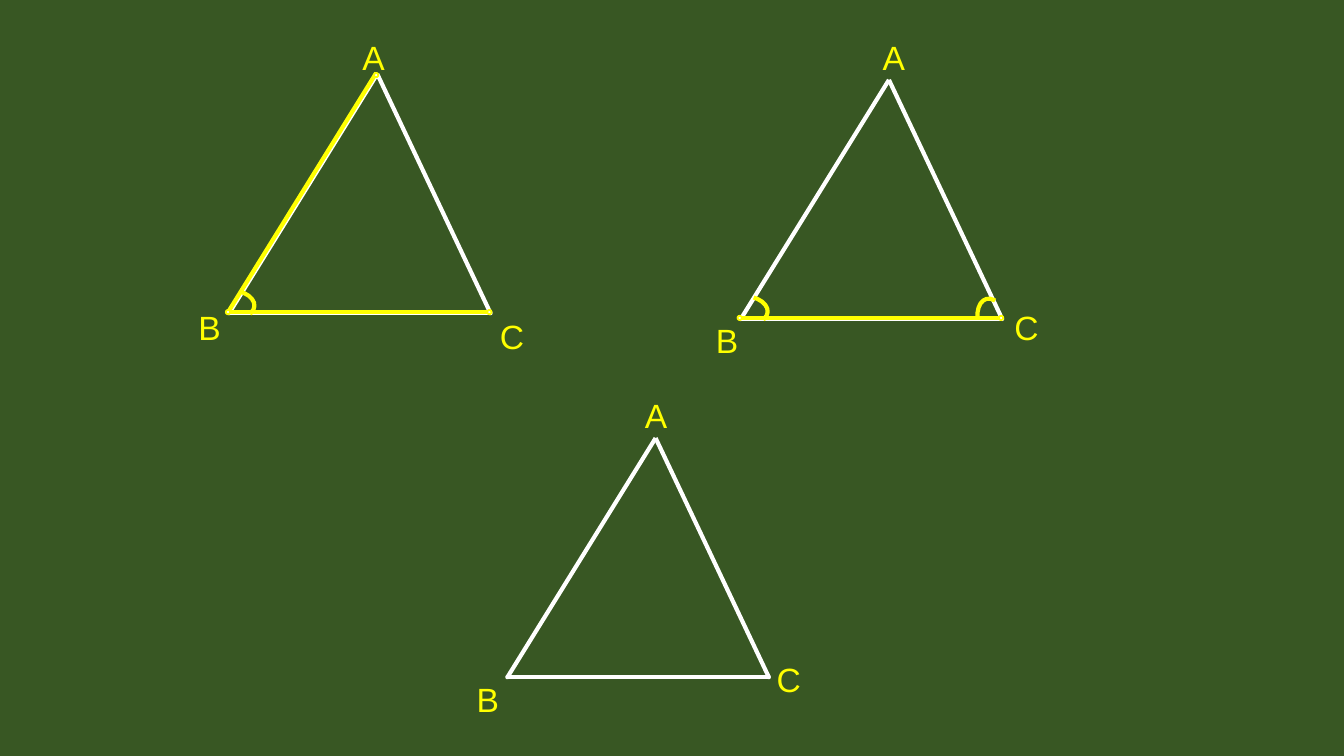
from lxml import etree
from pptx import Presentation
from pptx import util as u
from pptx.dml.color import RGBColor
from pptx.enum import shapes, text
from pptx.oxml.ns import qn

WHITE, YELLOW, GREEN = "FFFFFF", "FFFF00", "385723"
# Corners relative to the apex, in cm
CORNERS = {"A": (0, 0), "B": (-2.8, 4.52), "C": (2.14, 4.52)}
DOT = 0.08
# Highlights sit slightly up and left, so the white edge stays visible
SHIFT = 0.02


def color(hex_code):
    return RGBColor.from_string(hex_code)


def corner(apex, name):
    return apex[0] + CORNERS[name][0], apex[1] + CORNERS[name][1]


def add_side(page, apex, side, hex_code):
    start, end = (corner(apex, name) for name in side)
    line = page.shapes.add_connector(
        shapes.MSO_CONNECTOR.STRAIGHT, *map(u.Cm, start + end))
    line.line.color.rgb = color(hex_code)
    line.line.width = u.Pt(2.25)
    etree.SubElement(line._element.spPr, qn("a:effectLst"))


def add_dot(page, apex, name, outline=None):
    x, y = corner(apex, name)
    # The apex dot hangs below its corner
    top = y if name == "A" else y - DOT / 2
    dot = page.shapes.add_shape(
        shapes.MSO_SHAPE.OVAL, u.Cm(x - DOT / 2), u.Cm(top),
        u.Cm(DOT), u.Cm(DOT))
    dot.shadow.inherit = False
    dot.fill.solid()
    dot.fill.fore_color.rgb = color(WHITE)
    if outline:
        dot.line.color.rgb = color(outline)
        dot.line.width = u.Pt(1)
    else:
        dot.line.fill.background()


def add_triangle(page, apex, dots="ABC"):
    for side in ("AC", "AB", "BC"):
        add_side(page, apex, side, WHITE)
    for name in dots:
        add_dot(page, apex, name)


def add_highlight(page, apex, sides, dots):
    shifted = (apex[0] - SHIFT, apex[1] - SHIFT)
    for side in sides:
        add_side(page, shifted, side, YELLOW)
    for name in dots:
        add_dot(page, shifted, name, YELLOW)


def add_angle(page, left, top, rotation):
    arc = page.shapes.add_shape(
        shapes.MSO_SHAPE.ARC, u.Cm(left), u.Cm(top), u.Cm(0.84), u.Cm(0.53))
    arc.shadow.inherit = False
    arc.rotation = rotation
    arc.adjustments[0], arc.adjustments[1] = 178.8, 13.91
    arc.fill.background()
    arc.line.color.rgb = color(YELLOW)
    arc.line.width = u.Pt(2.25)


def add_label(page, name, left, top):
    box = page.shapes.add_textbox(
        u.Cm(left), u.Cm(top), u.Cm(1.63), u.Cm(0.97))
    frame = box.text_frame
    frame.word_wrap = True
    frame.auto_size = text.MSO_AUTO_SIZE.SHAPE_TO_FIT_TEXT
    frame.margin_left = frame.margin_right = u.Cm(0.19)
    frame.margin_top = frame.margin_bottom = u.Cm(0.1)
    para = frame.paragraphs[0]
    para.text = name
    para.font.name = "Arial"
    para.font.size = u.Pt(18)
    para.font.color.rgb = color(YELLOW)


def add_labels(page, places):
    for name, (left, top) in zip("ABC", places):
        add_label(page, name, left, top)


def main():
    deck = Presentation()
    deck.slide_width, deck.slide_height = u.Cm(25.4), u.Cm(14.29)
    page = deck.slides.add_slide(deck.slide_layouts[6])
    page.background.fill.solid()
    page.background.fill.fore_color.rgb = color(GREEN)

    # Two sides and the angle between them
    apex = (7.13, 1.4)
    add_triangle(page, apex, dots="BC")
    add_labels(page, [(6.66, 0.6), (3.56, 5.71), (9.26, 5.88)])
    add_highlight(page, apex, ["AB", "BC"], "ABC")
    add_angle(page, 3.97, 5.49, 4.8)

    # One side and the two angles on it
    apex = (16.8, 1.51)
    add_triangle(page, apex)
    add_labels(page, [(16.49, 0.6), (13.34, 5.94), (18.98, 5.71)])
    add_highlight(page, apex, ["BC"], "BC")
    add_angle(page, 13.67, 5.6, 4.8)
    add_angle(page, 18.33, 5.79, 255.6)

    # Plain triangle
    add_triangle(page, (12.39, 8.28))
    add_labels(page, [(12, 7.37), (8.82, 12.74), (14.49, 12.36)])

    deck.save("out.pptx")


if __name__ == "__main__":
    main()
